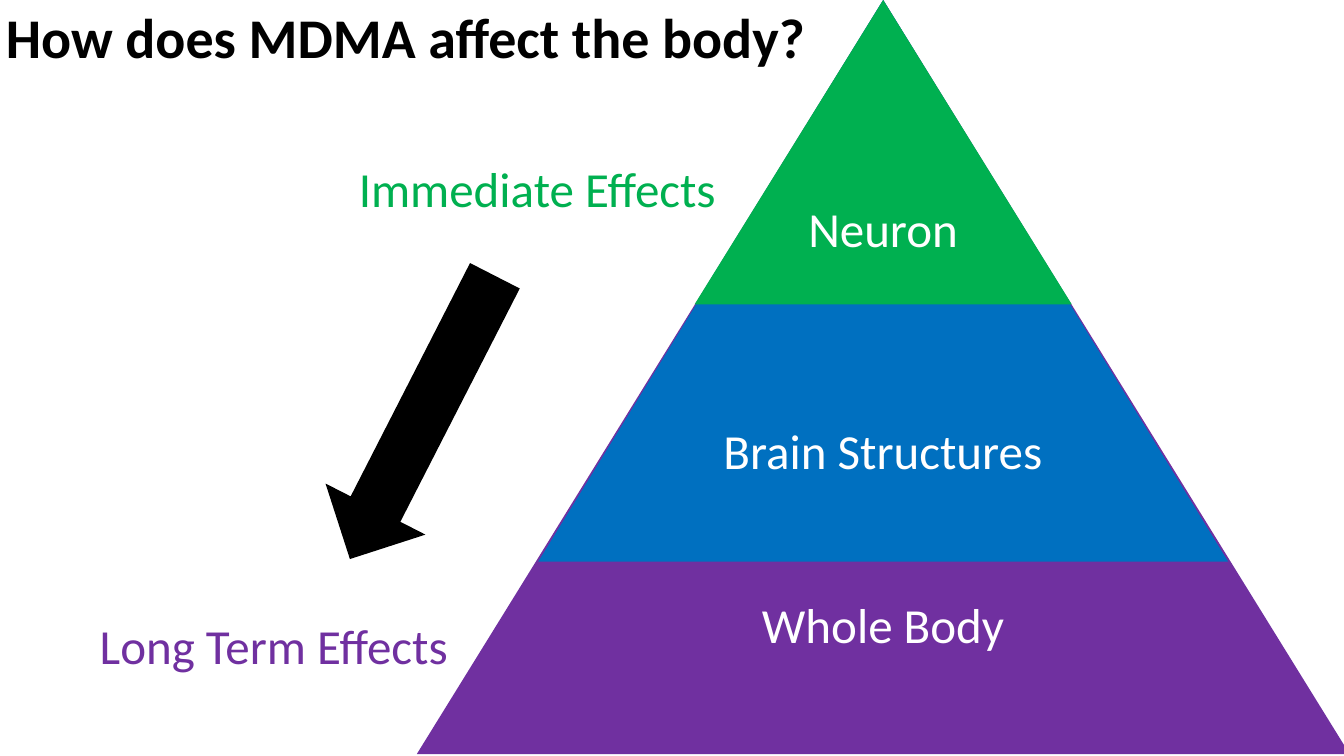
from lxml.etree import SubElement
from pptx import Presentation
from pptx.dml.color import RGBColor
from pptx.enum.shapes import MSO_SHAPE
from pptx.enum.text import MSO_ANCHOR, PP_ALIGN
from pptx.oxml.ns import qn
from pptx.util import Inches, Pt

GREEN, BLUE, PURPLE = "00B050", "0070C0", "7030A0"
BLACK, WHITE = "000000", "FFFFFF"
LINE_HEIGHT = 0.59


def color(hex_code):
    """Turn a hex string into a colour."""
    return RGBColor.from_string(hex_code)


def add_solid(page, kind, box, fill, line_width):
    """Add a plain shape with a sharp-cornered outline of its own colour."""
    shape = page.shapes.add_shape(kind, *map(Inches, box))
    shape.shadow.inherit = False
    shape.fill.solid()
    shape.fill.fore_color.rgb = color(fill)
    shape.line.color.rgb = color(fill)
    shape.line.width = Pt(line_width)
    outline = shape.line._get_or_add_ln()
    SubElement(outline, qn("a:miter"), lim="800000")
    return shape


def write(frame, text, size, hex_code, bold=False, align=PP_ALIGN.LEFT):
    """Write one line of text into a frame."""
    para = frame.paragraphs[0]
    para.alignment = align
    span = para.add_run()
    span.text = text
    span.font.name = "Calibri"
    span.font.size = Pt(size)
    span.font.bold = bold
    span.font.color.rgb = color(hex_code)


def add_label(page, box, text, size, hex_code, bold=False):
    """Add a free-standing line of text."""
    frame = page.shapes.add_textbox(*map(Inches, box)).text_frame
    frame.word_wrap = True
    write(frame, text, size, hex_code, bold)


def add_pyramid(page, center, top, tiers):
    """Stack triangles on a shared apex, the largest at the back."""
    for level, (text, fill, width, height) in reversed(list(enumerate(tiers))):
        box = (center - width / 2, top, width, height)
        triangle = add_solid(page, MSO_SHAPE.ISOSCELES_TRIANGLE, box, fill, 4.5)
        frame = triangle.text_frame
        frame.word_wrap = True
        frame.vertical_anchor = MSO_ANCHOR.MIDDLE
        frame.margin_top = Inches(0.05 + level * LINE_HEIGHT)
        write(frame, text, 35, WHITE, align=PP_ALIGN.CENTER)


def add_timeline(page, left, top):
    """Add the arrow leading from immediate to long term effects."""
    add_label(page, (left + 2.57, top, 3.85, 0.69), "Immediate Effects", 35, GREEN)
    add_label(page, (left, top + 4.54, 3.92, 0.69), "Long Term Effects", 35, PURPLE)
    box = (left + 1.73, top + 2.08, 3.14, 1.08)
    arrow = add_solid(page, MSO_SHAPE.RIGHT_ARROW, box, BLACK, 1)
    arrow.rotation = 117.1


def main():
    """Build the slide and save it."""
    deck = Presentation()
    deck.slide_width, deck.slide_height = Inches(13.33), Inches(7.5)
    page = deck.slides.add_slide(deck.slide_layouts[6])
    tiers = [
        ("Neuron", GREEN, 3.63, 2.93),
        ("Brain Structures", BLUE, 6.73, 5.48),
        ("Whole Body", PURPLE, 9.14, 7.39),
    ]
    add_pyramid(page, 8.76, 0.06, tiers)
    add_timeline(page, 0.89, 1.52)
    title = "How does MDMA affect the body?"
    add_label(page, (-0.04, -0.02, 9.08, 0.77), title, 40, BLACK, bold=True)
    deck.save("out.pptx")


if __name__ == "__main__":
    main()
